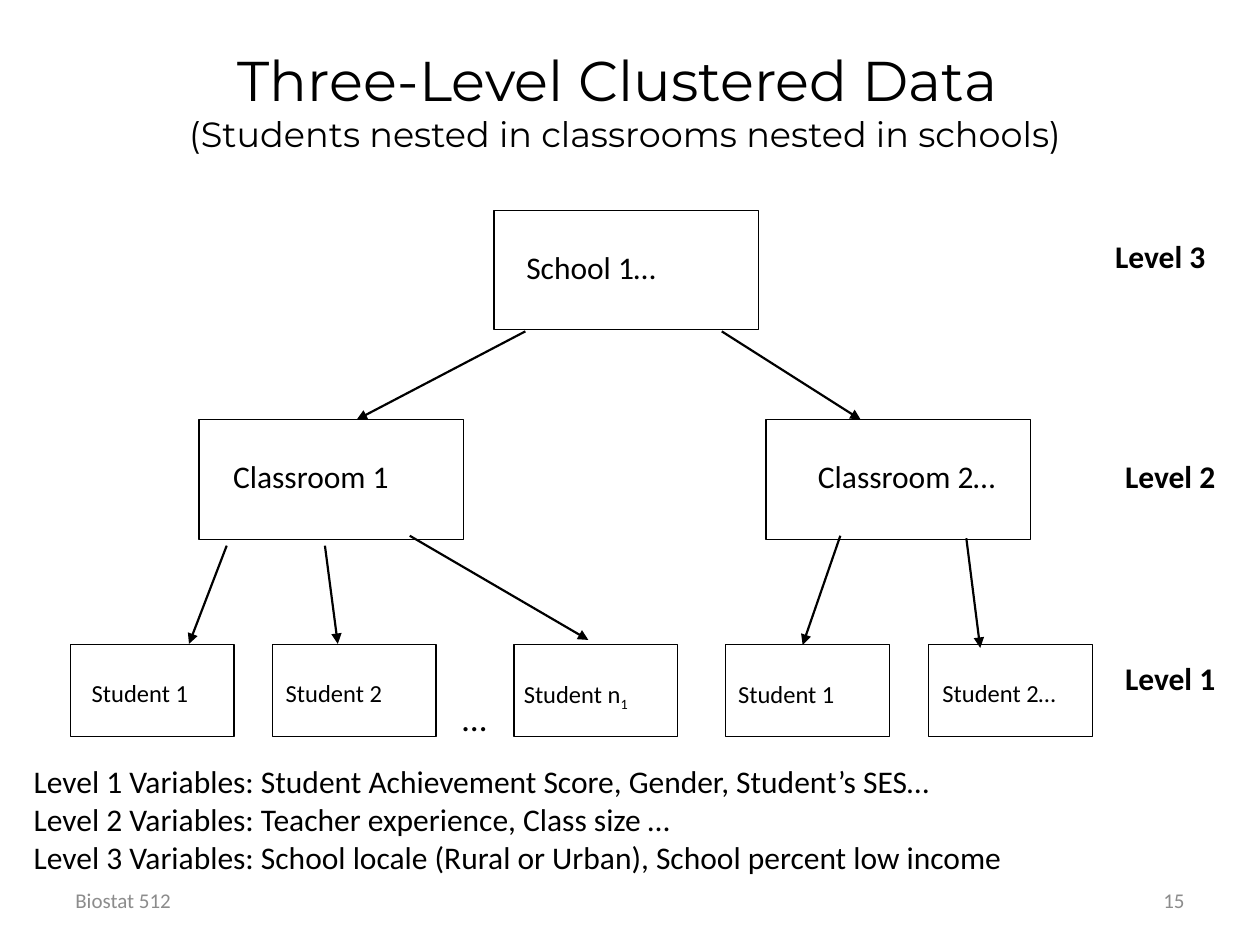
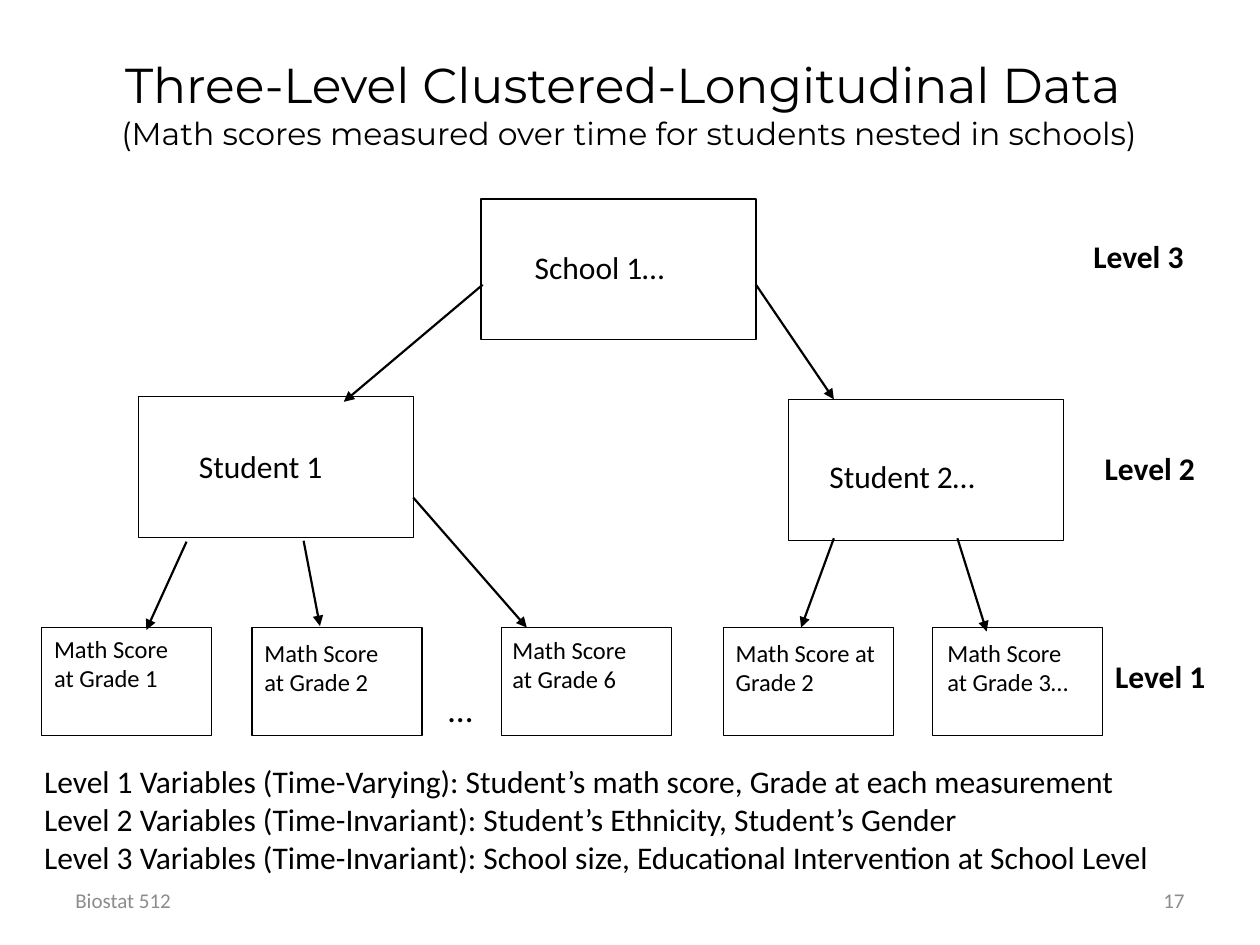
from pptx import Presentation
from pptx.dml.color import RGBColor
from pptx.enum.shapes import MSO_CONNECTOR, MSO_SHAPE
from pptx.enum.text import MSO_ANCHOR, PP_ALIGN
from pptx.oxml.ns import qn
from pptx.util import Cm, Pt
from lxml import etree

PROCESS = MSO_SHAPE.FLOWCHART_PROCESS
STRAIGHT = MSO_CONNECTOR.STRAIGHT
TOP, MIDDLE = MSO_ANCHOR.TOP, MSO_ANCHOR.MIDDLE
LEFT, CENTER, RIGHT = PP_ALIGN.LEFT, PP_ALIGN.CENTER, PP_ALIGN.RIGHT

BLACK, GRAY = "000000", "8C8C8C"
BODY_FONT, TITLE_FONT = "Calibri", "Montserrat"
INSET, INDENT = 0.25, 0.57
FOOTER = "Biostat 512"

# node: box x, box y, label runs, label x, label y, label width, label indent
SLIDES = [
    {
        "title": ("Three-Level Clustered Data ", 32),
        "subtitle": ("(Students nested in classrooms nested in schools)", 20),
        "title_at": (0.64, 0.64, 23.93, 2.74),
        "number": "15",
        "group_size": (5.33, 2.41),
        "groups": [
            (9.96, 4.24, ["School 1…"], 10.36, 4.88, 4.57, 0),
            (4.01, 8.46, ["Classroom 1"], 4.45, 9.09, 4.57, 0),
            (15.44, 8.46, ["Classroom 2…"], 15.67, 9.09, 5.08, INDENT),
        ],
        "unit_size": (3.3, 1.85),
        "units": [
            (1.42, 13, ["Student 1"], 1.6, 13.54, 3.05, 0),
            (5.49, 13, ["Student 2"], 5.51, 13.54, 3.05, 0),
            (10.36, 13, ["Student n", "1"], 10.31, 13.56, 3.12, 0),
            (14.63, 13, ["Student 1"], 14.63, 13.56, 3.81, 0),
            (18.72, 13, ["Student 2…"], 18.75, 13.54, 3.05, 0),
        ],
        "arrows": [
            (10.59, 6.68, 7.19, 8.46), (14.55, 6.68, 17.35, 8.46),
            (4.57, 11, 3.81, 12.98), (6.55, 11, 6.81, 12.98),
            (8.26, 10.8, 11.86, 12.9), (16.94, 10.8, 16.18, 13),
            (19.48, 10.85, 19.76, 13.06),
        ],
        "ellipsis_at": (9.07, 13.92, 1.52, 0.97),
        "levels": [(22.23, 4.65), (22.43, 9.09), (22.43, 13.16)],
        "variables_x": 0.43,
        "variables": [
            "Level 1 Variables: Student Achievement Score, Gender, Student’s SES…",
            "Level 2 Variables: Teacher experience, Class size …",
            "Level 3 Variables: School locale (Rural or Urban), School percent low income",
        ],
    },
    {
        "title": ("Three-Level Clustered-Longitudinal Data ", 28),
        "subtitle": ("(Math scores measured over time for students nested in schools)", 18),
        "title_at": (0.2, 0.43, 24.97, 3.3),
        "number": "17",
        "group_size": (5.54, 2.84),
        "groups": [
            (9.7, 4.01, ["School 1…"], 9.96, 4.88, 5.28, INDENT),
            (2.79, 8, ["Student 1"], 3.76, 8.89, 4.75, 0),
            (15.9, 8.05, ["Student 2…"], 15.9, 9.09, 5.28, INDENT),
        ],
        "unit_size": (3.43, 2.18),
        "units": [
            (0.84, 12.65, ["Math Score at Grade 1"], 0.84, 12.65, 3.18, 0),
            (5.08, 12.65, ["Math Score at Grade 2"], 5.08, 12.73, 3.18, 0),
            (10.11, 12.65, ["Math Score at Grade 6"], 10.08, 12.67, 3.25, 0),
            (14.58, 12.65, ["Math Score at Grade 2"], 14.58, 12.73, 3.96, 0),
            (18.8, 12.65, ["Math Score at Grade 3…"], 18.85, 12.73, 3.18, 0),
        ],
        "arrows": [
            (9.73, 5.74, 6.93, 8.1), (15.24, 5.74, 16.81, 8.05),
            (3.76, 10.92, 2.95, 12.7), (6.12, 10.9, 6.45, 12.62),
            (8.33, 10.03, 10.62, 12.65), (16.81, 10.85, 16.15, 12.65),
            (19.3, 10.85, 19.89, 12.73),
        ],
        "ellipsis_at": (8.79, 13.74, 1.57, 1.14),
        "levels": [(21.79, 4.65), (22.02, 8.92), (22.23, 13.13)],
        "variables_x": 0.64,
        "variables": [
            "Level 1 Variables (Time-Varying): Student’s math score, Grade at each measurement",
            "Level 2 Variables (Time-Invariant): Student’s Ethnicity, Student’s Gender",
            "Level 3 Variables (Time-Invariant): School size, Educational Intervention at School Level",
        ],
    },
]


def rgb(color):
    return RGBColor.from_string(color)


def add_run(p, text, size, color=BLACK, font=BODY_FONT, bold=False):
    r = p.add_run()
    r.text = text
    r.font.size = Pt(size)
    r.font.name = font
    r.font.bold = bold
    r.font.color.rgb = rgb(color)
    return r


def add_frame(s, at, anchor=TOP, indent=0):
    tf = s.shapes.add_textbox(*map(Cm, at)).text_frame
    tf.word_wrap = True
    tf.vertical_anchor = anchor
    tf.margin_left = Cm(INSET + indent)
    return tf


def add_text(s, at, lines, size, color=BLACK, bold=False, align=LEFT, anchor=TOP):
    tf = add_frame(s, at, anchor)
    for i, line in enumerate(lines):
        p = tf.add_paragraph() if i else tf.paragraphs[0]
        p.alignment = align
        add_run(p, line, size, color, bold=bold)


def add_title(s, at, title, subtitle):
    p = add_frame(s, at, MIDDLE).paragraphs[0]
    p.alignment = CENTER
    add_run(p, *title, font=TITLE_FONT)
    p.add_line_break()
    add_run(p, *subtitle, font=TITLE_FONT)


def add_node(s, node, box_size, label_height, size):
    x, y, (label, *subscripts), label_x, label_y, label_width, indent = node
    sp = s.shapes.add_shape(PROCESS, *map(Cm, (x, y, *box_size)))
    sp.shadow.inherit = False
    sp.fill.background()
    sp.line.color.rgb = rgb(BLACK)
    sp.line.width = Pt(0.75)
    tf = add_frame(s, (label_x, label_y, label_width, label_height), indent=indent)
    p = tf.paragraphs[0]
    add_run(p, label, size)
    for subscript in subscripts:
        r = add_run(p, subscript, size)
        r.font._element.set("baseline", "-25000")


def add_arrow(s, ends):
    arrow = s.shapes.add_connector(STRAIGHT, *map(Cm, ends))
    arrow.line.color.rgb = rgb(BLACK)
    arrow.line.width = Pt(1.25)
    etree.SubElement(arrow.line._get_or_add_ln(), qn("a:tailEnd"), type="triangle")
    etree.SubElement(arrow._element.spPr, qn("a:effectLst"))


def add_footer(s, number):
    for x, text, align in ((1.27, FOOTER, LEFT), (18.2, number, RIGHT)):
        add_text(s, (x, 17.65, 5.93, 1.01), [text], 12, GRAY, align=align, anchor=MIDDLE)


def build_slide(prs, d):
    s = prs.slides.add_slide(prs.slide_layouts[6])
    add_title(s, d["title_at"], d["title"], d["subtitle"])
    add_footer(s, d["number"])
    for node in d["groups"]:
        add_node(s, node, d["group_size"], 1.02, 18)
    for node in d["units"]:
        add_node(s, node, d["unit_size"], 1.45, 14)
    for ends in d["arrows"]:
        add_arrow(s, ends)
    add_text(s, d["ellipsis_at"], ["…"], 20)
    for i, (x, y) in enumerate(d["levels"]):
        add_text(s, (x, y, 2.54, 1.02), [f"Level {3 - i}"], 18, bold=True)
    add_text(s, (d["variables_x"], 15.24, 24.13, 2.57), d["variables"], 18)


def main():
    prs = Presentation()
    prs.slide_width, prs.slide_height = Cm(25.4), Cm(19.05)
    for d in SLIDES:
        build_slide(prs, d)
    prs.save("out.pptx")


if __name__ == "__main__":
    main()
